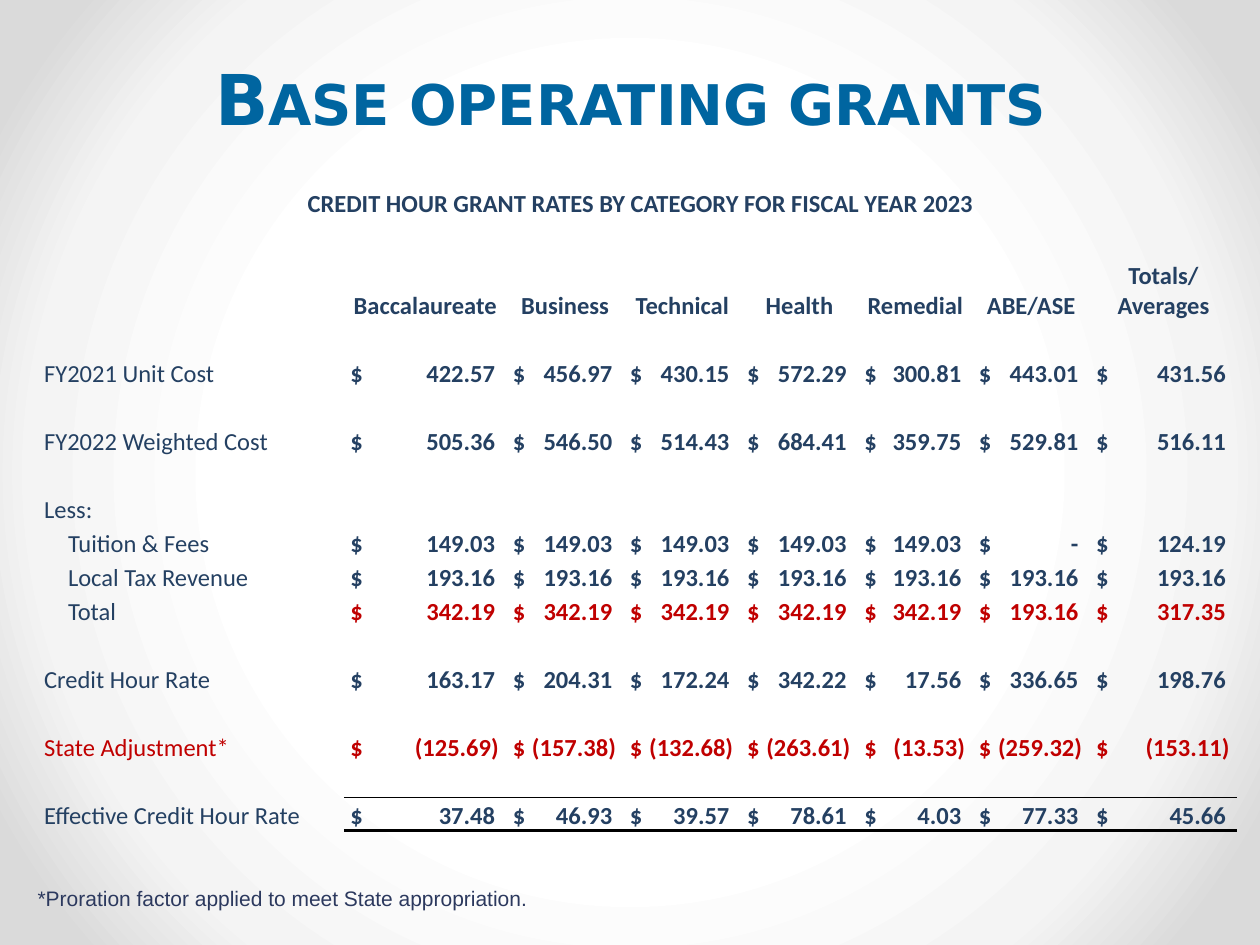
"""Build the slide of credit hour grant rates as a ruled accounting table."""
from dataclasses import dataclass

from lxml import etree
from pptx import Presentation, util as u
from pptx.dml.color import RGBColor
from pptx.enum import text as t
from pptx.oxml import parse_xml
from pptx.oxml.ns import qn


@dataclass(frozen=True)
class Theme:
    title: str = "0065A0"
    navy: str = "244062"
    red: str = "C00000"
    footnote: str = "2C395E"
    rule: str = "000000"
    title_font: str = "DejaVu Sans"
    table_font: str = "Calibri"
    footnote_font: str = "Arial"
    title_size: int = 40
    table_size: int = 14
    footnote_size: int = 12
    backdrop: tuple = ((50, "FFFFFF"), (76, "F4F4F4"), (92, "DADADA"))


THEME = Theme()
TITLE = "Base operating grants"
CAPTION = "CREDIT HOUR GRANT RATES BY CATEGORY FOR FISCAL YEAR 2023"
FOOTNOTE = "*Proration factor applied to meet State appropriation."
CATEGORIES = ["Baccalaureate", "Business", "Technical", "Health", "Remedial",
              "ABE/ASE", "Totals/ Averages"]
RATES = {
    4: ("FY2021 Unit Cost", "422.57 456.97 430.15 572.29 300.81 443.01 431.56"),
    6: ("FY2022 Weighted Cost", "505.36 546.50 514.43 684.41 359.75 529.81 516.11"),
    8: ("Less:", ""),
    9: ("Tuition & Fees", "149.03 149.03 149.03 149.03 149.03 - 124.19"),
    10: ("Local Tax Revenue", "193.16 193.16 193.16 193.16 193.16 193.16 193.16"),
    11: ("Total", "342.19 342.19 342.19 342.19 342.19 193.16 317.35"),
    13: ("Credit Hour Rate", "163.17 204.31 172.24 342.22 17.56 336.65 198.76"),
    15: ("State Adjustment*",
         "(125.69) (157.38) (132.68) (263.61) (13.53) (259.32) (153.11)"),
    17: ("Effective Credit Hour Rate", "37.48 46.93 39.57 78.61 4.03 77.33 45.66"),
}
DEDUCTIONS = (9, 10, 11)
RED_LABELS, RED_AMOUNTS = (15,), (11, 15)
CAPTION_ROW, HEADER_ROW, RESULT_ROW = 0, 2, 17
COLUMNS = [2.38, 1.29, 0.93, 0.93, 0.93, 0.91, 0.93, 1.17]
ROW_HEIGHT, ROW_COUNT = 0.27, 18
DEDUCTION_INDENT, DOLLAR_INSET, AMOUNT_INSET, PAREN_WIDTH = 0.19, 0.05, 0.09, 0.03


def style(paragraph, font, size, color, bold=False):
    for run in paragraph.runs:
        run.font.name, run.font.size, run.font.bold = font, u.Pt(size), bold
        run.font.color.rgb = RGBColor.from_string(color)


def write(cell, wording, color=THEME.navy, bold=True, centred=False):
    paragraph = cell.text_frame.paragraphs[0]
    paragraph.text = wording
    if centred:
        paragraph.alignment = t.PP_ALIGN.CENTER
    style(paragraph, THEME.table_font, THEME.table_size, color, bold)


def write_amount(cell, amount, width, color):
    cell.margin_left = u.Inches(DOLLAR_INSET)
    paragraph = cell.text_frame.paragraphs[0]
    stop = width - DOLLAR_INSET - AMOUNT_INSET
    stop += PAREN_WIDTH if amount.endswith(")") else 0
    tabs = etree.SubElement(paragraph._p.get_or_add_pPr(), qn("a:tabLst"))
    etree.SubElement(tabs, qn("a:tab"), pos=str(u.Inches(stop)), algn="r")
    write(cell, f"$\t{amount}", color)


def draw_rule(cell, edge, points):
    line = etree.Element(qn(f"a:{edge}"), w=str(u.Pt(points)))
    fill = etree.SubElement(line, qn("a:solidFill"))
    etree.SubElement(fill, qn("a:srgbClr"), val=THEME.rule)
    cell._tc.get_or_add_tcPr().insert(0, line)


def paint_background(slide):
    stops = "".join(f'<a:gs pos="{share * 1000}"><a:srgbClr val="{color}"/></a:gs>'
                    for share, color in THEME.backdrop)
    slide._element.cSld.insert(0, parse_xml(
        '<p:bg xmlns:p="http://schemas.openxmlformats.org/presentationml/2006/main" '
        'xmlns:a="http://schemas.openxmlformats.org/drawingml/2006/main"><p:bgPr>'
        f'<a:gradFill rotWithShape="1"><a:gsLst>{stops}</a:gsLst><a:path path="circle">'
        '<a:fillToRect l="50000" t="50000" r="50000" b="50000"/></a:path></a:gradFill>'
        '<a:effectLst/></p:bgPr></p:bg>'))


def add_title(slide):
    title = slide.shapes.title
    title.left, title.top, title.width, title.height = map(
        u.Inches, (0.51, 0.29, 8.99, 0.87))
    title.text_frame.text = TITLE
    title.text_frame.auto_size = t.MSO_AUTO_SIZE.NONE
    title.text_frame.vertical_anchor = t.MSO_ANCHOR.BOTTOM
    heading = title.text_frame.paragraphs[0]
    heading.alignment = t.PP_ALIGN.CENTER
    style(heading, THEME.title_font, THEME.title_size, THEME.title, True)
    heading.runs[0].font._element.set("cap", "small")


def add_rates(slide):
    height = ROW_HEIGHT * (ROW_COUNT + 1)
    rates = slide.shapes.add_table(
        ROW_COUNT, len(COLUMNS), u.Inches(0.35), u.Inches(1.47),
        u.Inches(sum(COLUMNS)), u.Inches(height)).table
    rates.first_row = rates.horz_banding = False
    rates._tbl.tblPr.find(qn("a:tableStyleId")).text = (
        "{2D5ABB26-0587-4C30-8999-92F81FD0307C}")
    for column, width in zip(rates.columns, COLUMNS):
        column.width = u.Inches(width)
    for index, row in enumerate(rates.rows):
        row.height = u.Inches(ROW_HEIGHT * (2 if index == HEADER_ROW else 1))
    for cell in rates.iter_cells():
        cell.fill.background()
        cell.vertical_anchor = t.MSO_ANCHOR.BOTTOM
        cell.margin_left = cell.margin_right = cell.margin_top = cell.margin_bottom = 0
        etree.SubElement(cell.text_frame.paragraphs[0]._p, qn("a:endParaRPr"),
                         sz=str(THEME.table_size * 100))

    caption = rates.cell(CAPTION_ROW, 0)
    caption.merge(rates.cell(CAPTION_ROW, len(COLUMNS) - 1))
    write(caption, CAPTION, centred=True)
    for column, category in enumerate(CATEGORIES, 1):
        write(rates.cell(HEADER_ROW, column), category, centred=True)
        draw_rule(rates.cell(RESULT_ROW - 1, column), "lnB", 0.5)
        draw_rule(rates.cell(RESULT_ROW, column), "lnB", 2)
        draw_rule(rates.cell(RESULT_ROW, column), "lnT", 0.5)

    for row, (label, amounts) in RATES.items():
        label_cell = rates.cell(row, 0)
        label_cell.margin_left = u.Inches(DEDUCTION_INDENT if row in DEDUCTIONS else 0)
        write(label_cell, label, THEME.red if row in RED_LABELS else THEME.navy, False)
        color = THEME.red if row in RED_AMOUNTS else THEME.navy
        for column, amount in enumerate(amounts.split(), 1):
            write_amount(rates.cell(row, column), amount, COLUMNS[column], color)


def add_footnote(slide):
    footnote = slide.shapes.add_textbox(*map(u.Inches, (0.2, 6.98, 7.01, 0.3)))
    footnote.text_frame.word_wrap = True
    footnote.text_frame.text = FOOTNOTE
    style(footnote.text_frame.paragraphs[0], THEME.footnote_font,
          THEME.footnote_size, THEME.footnote)


def main():
    deck = Presentation()
    deck.slide_width, deck.slide_height = u.Inches(10), u.Inches(7.5)
    slide = deck.slides.add_slide(deck.slide_layouts.get_by_name("Title Only"))
    paint_background(slide)
    add_title(slide)
    add_rates(slide)
    add_footnote(slide)
    deck.save("out.pptx")


if __name__ == "__main__":
    main()
